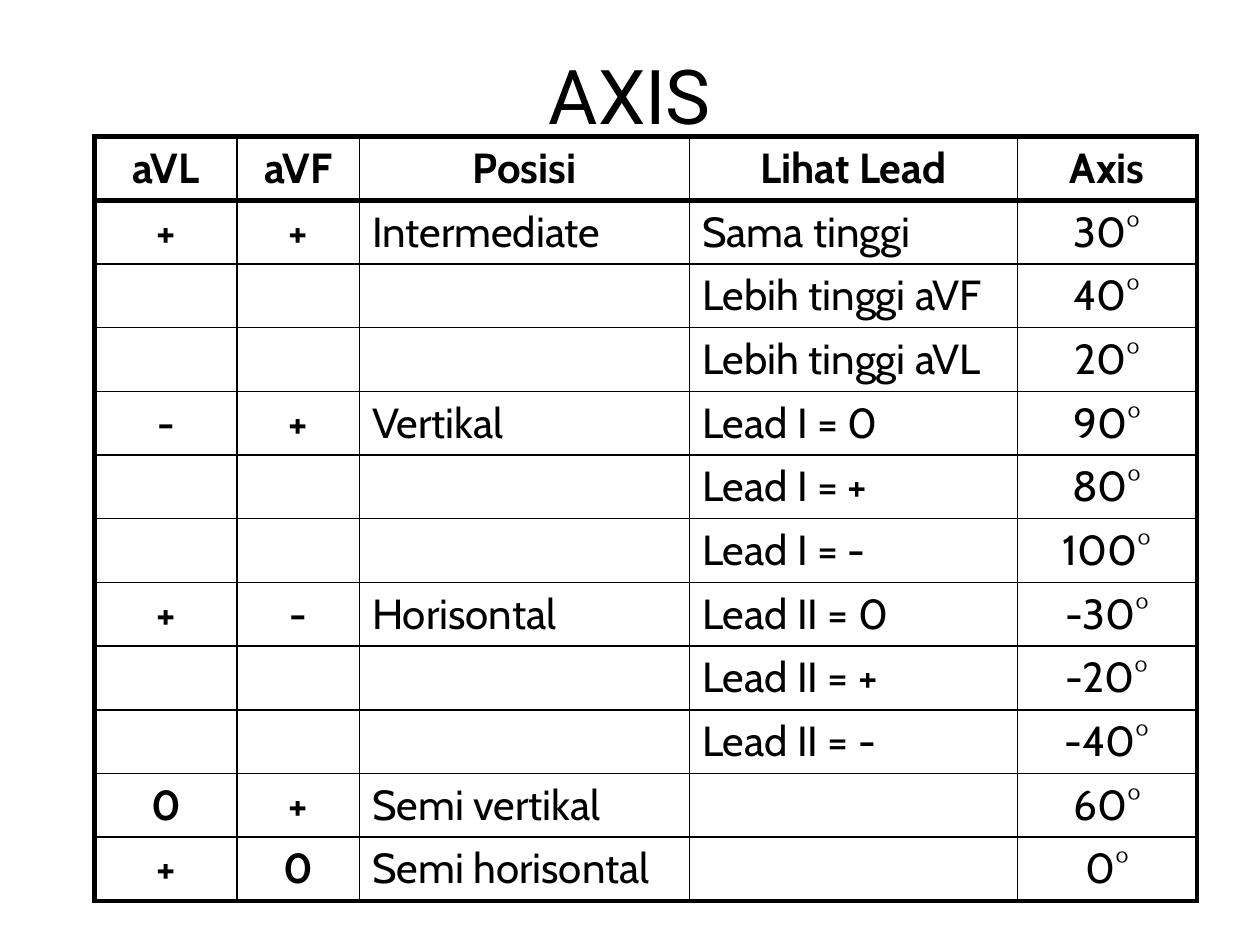
"""Build the AXIS slide: a table of ECG axis positions."""
from pptx import Presentation
from pptx.dml.color import RGBColor
from pptx.enum.text import MSO_ANCHOR, PP_ALIGN
from pptx.oxml.ns import qn
from pptx.util import Pt
from lxml.etree import SubElement

CENTER, LEFT = PP_ALIGN.CENTER, PP_ALIGN.LEFT
MIDDLE = MSO_ANCHOR.MIDDLE
BLACK = "000000"
THICK, THIN = 3, 1

TITLE = "AXIS"
ROWS = [
    ("aVL", "aVF", "Posisi", "Lihat Lead", "Axis"),
    ("+", "+", "Intermediate", "Sama tinggi", "30°"),
    ("", "", "", "Lebih tinggi aVF", "40°"),
    ("", "", "", "Lebih tinggi aVL", "20°"),
    ("-", "+", "Vertikal", "Lead I = 0", "90°"),
    ("", "", "", "Lead I = +", "80°"),
    ("", "", "", "Lead I = -", "100°"),
    ("+", "-", "Horisontal", "Lead II = 0", "-30°"),
    ("", "", "", "Lead II = +", "-20°"),
    ("", "", "", "Lead II = -", "-40°"),
    ("0", "+", "Semi vertikal", "", "60°"),
    ("+", "0", "Semi horisontal", "", "0°"),
]
COLUMN_WIDTHS = [81.5, 70, 188.5, 187.5, 102.5]
COLUMN_ALIGNS = [CENTER, CENTER, LEFT, LEFT, CENTER]
SIGN_COLUMNS = (0, 1)
ROW_HEIGHT = 33.84


def format_text(paragraph, font, size, align, bold=False):
    """Set the alignment of a paragraph and the font of its runs."""
    paragraph.alignment = align
    for span in paragraph.runs:
        span.font.name = font
        span.font.size = Pt(size)
        span.font.bold = bold
        span.font.color.rgb = RGBColor.from_string(BLACK)


def set_border(cell, side, width):
    """Draw one solid side of a cell; sides go in the order L, R, T, B."""
    line = SubElement(cell._tc.get_or_add_tcPr(), qn(f"a:ln{side}"), w=str(Pt(width)))
    fill = SubElement(line, qn("a:solidFill"))
    SubElement(fill, qn("a:srgbClr"), val=BLACK)


def set_space_before(paragraph, percent):
    """Set the space before a paragraph as a share of its line."""
    space = SubElement(paragraph._p.get_or_add_pPr(), qn("a:spcBef"))
    SubElement(space, qn("a:spcPct"), val=str(percent * 1000))


def add_title(page):
    """Fill and place the title placeholder."""
    title = page.shapes.title
    title.left, title.top, title.width, title.height = Pt(36), Pt(24), Pt(648), Pt(60)
    title.text_frame.text = TITLE
    title.text_frame.vertical_anchor = MIDDLE
    format_text(title.text_frame.paragraphs[0], "Roboto", 43.2, CENTER)


def add_axis_table(page):
    """Add the table, with thick lines round it and under its header."""
    last_row, last_column = len(ROWS) - 1, len(COLUMN_WIDTHS) - 1
    table = page.shapes.add_table(
        len(ROWS), len(COLUMN_WIDTHS), Pt(54), Pt(78),
        Pt(sum(COLUMN_WIDTHS)), Pt(ROW_HEIGHT * len(ROWS))).table
    table.first_row = table.horz_banding = False
    for column, width in zip(table.columns, COLUMN_WIDTHS):
        column.width = Pt(width)
    for r, values in enumerate(ROWS):
        table.rows[r].height = Pt(ROW_HEIGHT)
        for c, value in enumerate(values):
            cell = table.cell(r, c)
            thick_sides = {"L": c == 0, "R": c == last_column,
                           "T": r in (0, 1), "B": r in (0, last_row)}
            for side, thick in thick_sides.items():
                set_border(cell, side, THICK if thick else THIN)
            cell.fill.background()
            if value:
                cell.text_frame.text = value
                para = cell.text_frame.paragraphs[0]
                align = CENTER if r == 0 else COLUMN_ALIGNS[c]
                format_text(para, "Cabin", 24, align, r == 0 or c in SIGN_COLUMNS)
                set_space_before(para, 20)


def main():
    """Build and save the deck."""
    deck = Presentation()
    deck.slide_width, deck.slide_height = Pt(720), Pt(540)
    page = deck.slides.add_slide(deck.slide_layouts[5])
    add_title(page)
    add_axis_table(page)
    deck.save("out.pptx")


if __name__ == "__main__":
    main()
